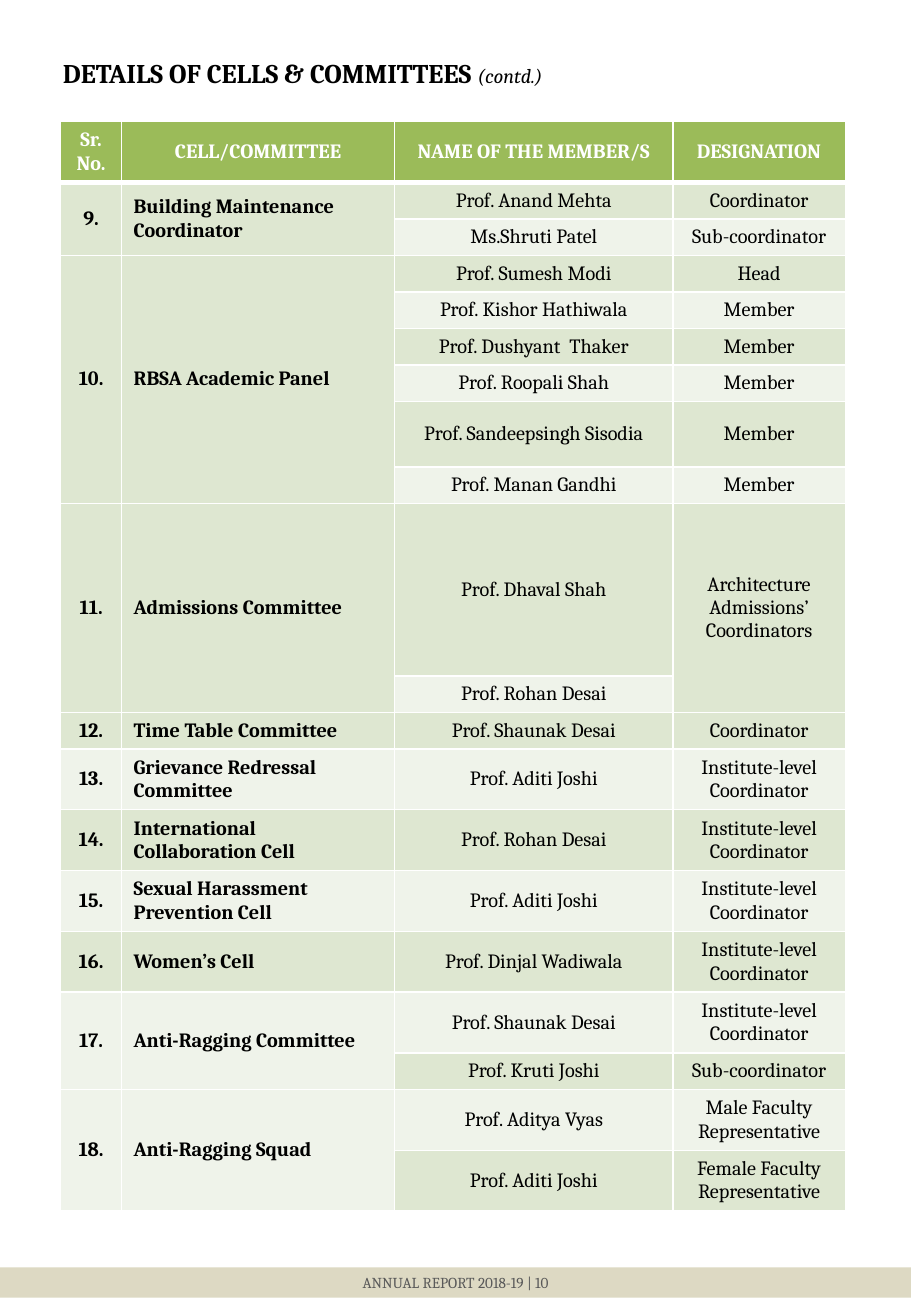
from dataclasses import dataclass

from lxml import etree
from pptx import Presentation
from pptx import util as u
from pptx.dml.color import RGBColor
from pptx.enum import shapes, text
from pptx.oxml.ns import qn


@dataclass(frozen=True)
class Theme:
    font: str = "Cambria"
    ink: str = "000000"
    white: str = "FFFFFF"
    header: str = "9BBB59"
    bands: tuple = ("DEE7D1", "EFF3EA")
    footer: str = "DDD9C3"
    footer_ink: str = "595959"
    title_size: int = 16
    body_size: int = 12
    footer_size: int = 9


THEME = Theme()
CENTER, LEFT = text.PP_ALIGN.CENTER, text.PP_ALIGN.LEFT
COLUMN_WIDTHS = (0.5, 2.25, 2.29, 1.42)
HEADINGS = ("Sr. No.", "CELL/COMMITTEE", "NAME OF THE MEMBER/S", "DESIGNATION")
HEADER_HEIGHT, ONE_LINE, TWO_LINES = 0.49, 0.3, 0.5
INSTITUTE = "Institute-level Coordinator"
FIRST_NUMBER = 9

# Committee, then its members: name, designation (None continues the one above), row height
COMMITTEES = (
    ("Building Maintenance Coordinator", (
        ("Prof. Anand Mehta", "Coordinator", ONE_LINE),
        ("Ms.Shruti Patel", "Sub-coordinator", ONE_LINE))),
    ("RBSA Academic Panel", (
        ("Prof. Sumesh Modi", "Head", ONE_LINE),
        ("Prof. Kishor Hathiwala", "Member", ONE_LINE),
        ("Prof. Dushyant  Thaker", "Member", ONE_LINE),
        ("Prof. Roopali Shah", "Member", ONE_LINE),
        ("Prof. Sandeepsingh Sisodia", "Member", 0.54),
        ("Prof. Manan Gandhi", "Member", ONE_LINE))),
    ("Admissions Committee", (
        ("Prof. Dhaval Shah", "Architecture Admissions’ Coordinators", 1.42),
        ("Prof. Rohan Desai", None, ONE_LINE))),
    ("Time Table Committee", (("Prof. Shaunak Desai", "Coordinator", ONE_LINE),)),
    ("Grievance Redressal Committee", (("Prof. Aditi Joshi", INSTITUTE, TWO_LINES),)),
    ("International Collaboration Cell", (("Prof. Rohan Desai", INSTITUTE, TWO_LINES),)),
    ("Sexual Harassment Prevention Cell", (("Prof. Aditi Joshi", INSTITUTE, TWO_LINES),)),
    ("Women’s Cell", (("Prof. Dinjal Wadiwala", INSTITUTE, TWO_LINES),)),
    ("Anti-Ragging Committee", (
        ("Prof. Shaunak Desai", INSTITUTE, TWO_LINES),
        ("Prof. Kruti Joshi", "Sub-coordinator", ONE_LINE))),
    ("Anti-Ragging Squad", (
        ("Prof. Aditya Vyas", "Male Faculty Representative", TWO_LINES),
        ("Prof. Aditi Joshi", "Female Faculty Representative", TWO_LINES))),
)


def style(font, size, color, bold=False):
    font.name, font.size, font.bold = THEME.font, u.Pt(size), bold
    font.color.rgb = RGBColor.from_string(color)


def paint(fill, color):
    fill.solid()
    fill.fore_color.rgb = RGBColor.from_string(color)


def add_title(slide, left, top, width, height):
    frame = slide.shapes.add_textbox(*map(u.Inches, (left, top, width, height))).text_frame
    frame.word_wrap = True
    heading = frame.paragraphs[0]
    main = heading.add_run()
    main.text = "DETAILS OF CELLS & COMMITTEES "
    style(main.font, THEME.title_size, THEME.ink, bold=True)
    continued = heading.add_run()
    continued.text = "(contd.)"
    style(continued.font, THEME.body_size, THEME.ink)
    continued.font.italic = True


def set_borders(cell, top=1, bottom=1):
    properties = cell._tc.get_or_add_tcPr()
    sides = (("L", 1), ("R", 1), ("T", top), ("B", bottom))
    for position, (side, points) in enumerate(sides):
        line = etree.Element(qn(f"a:ln{side}"), w=str(u.Pt(points)))
        solid = etree.SubElement(line, qn("a:solidFill"))
        etree.SubElement(solid, qn("a:srgbClr"), val=THEME.white)
        properties.insert(position, line)


def write_cell(cell, words, color=THEME.ink, bold=False, align=CENTER):
    cell.vertical_anchor = text.MSO_ANCHOR.MIDDLE
    cell.text = words
    paragraph = cell.text_frame.paragraphs[0]
    paragraph.alignment = align
    style(paragraph.font, THEME.body_size, color, bold)


def add_committees(slide, left, top, width):
    heights = [HEADER_HEIGHT] + [h for _, members in COMMITTEES for _, _, h in members]
    box = map(u.Inches, (left, top, width, sum(heights)))
    table = slide.shapes.add_table(len(heights), len(COLUMN_WIDTHS), *box).table
    for column, share in zip(table.columns, COLUMN_WIDTHS):
        column.width = u.Inches(width * share / sum(COLUMN_WIDTHS))

    # Row heights, banding and rules
    for r, (row, height) in enumerate(zip(table.rows, heights)):
        row.height = u.Inches(height)
        for cell in row.cells:
            paint(cell.fill, THEME.bands[(r - 1) % 2] if r else THEME.header)
            set_borders(cell, top=3 if r == 1 else 1, bottom=1 if r else 3)

    # Header row
    for c, words in enumerate(HEADINGS):
        write_cell(table.cell(0, c), words, THEME.white, bold=True)

    # Committees with their members
    first = 1
    for number, (committee, members) in enumerate(COMMITTEES, FIRST_NUMBER):
        last = first + len(members) - 1
        if last > first:
            for c in (0, 1):
                table.cell(first, c).merge(table.cell(last, c))
        write_cell(table.cell(first, 0), f"{number}.", bold=True)
        write_cell(table.cell(first, 1), committee, bold=True, align=LEFT)
        for r, (member, designation, _) in enumerate(members, first):
            write_cell(table.cell(r, 2), member)
            if designation is None:
                table.cell(r - 1, 3).merge(table.cell(r, 3))
            else:
                write_cell(table.cell(r, 3), designation)
        first = last + 1


def add_footer(slide, left, top, width, height):
    band = slide.shapes.add_shape(shapes.MSO_SHAPE.RECTANGLE,
                                  *map(u.Inches, (left, top, width, height)))
    band.shadow.inherit = False
    paint(band.fill, THEME.footer)
    band.line.fill.background()
    frame = band.text_frame
    frame.word_wrap = True
    frame.vertical_anchor = text.MSO_ANCHOR.MIDDLE
    label = frame.paragraphs[0]
    label.text = "ANNUAL REPORT 2018-19 | 10"
    label.alignment = CENTER
    style(label.font, THEME.footer_size, THEME.footer_ink)


def main():
    report = Presentation()
    report.slide_width, report.slide_height = u.Inches(7.5), u.Inches(10.83)
    slide = report.slides.add_slide(report.slide_layouts[6])
    add_title(slide, 0.42, 0.42, 6.67, 0.37)
    add_committees(slide, 0.5, 1, 6.46)
    add_footer(slide, 0, 10.43, 7.5, 0.25)
    report.save("out.pptx")


if __name__ == "__main__":
    main()
